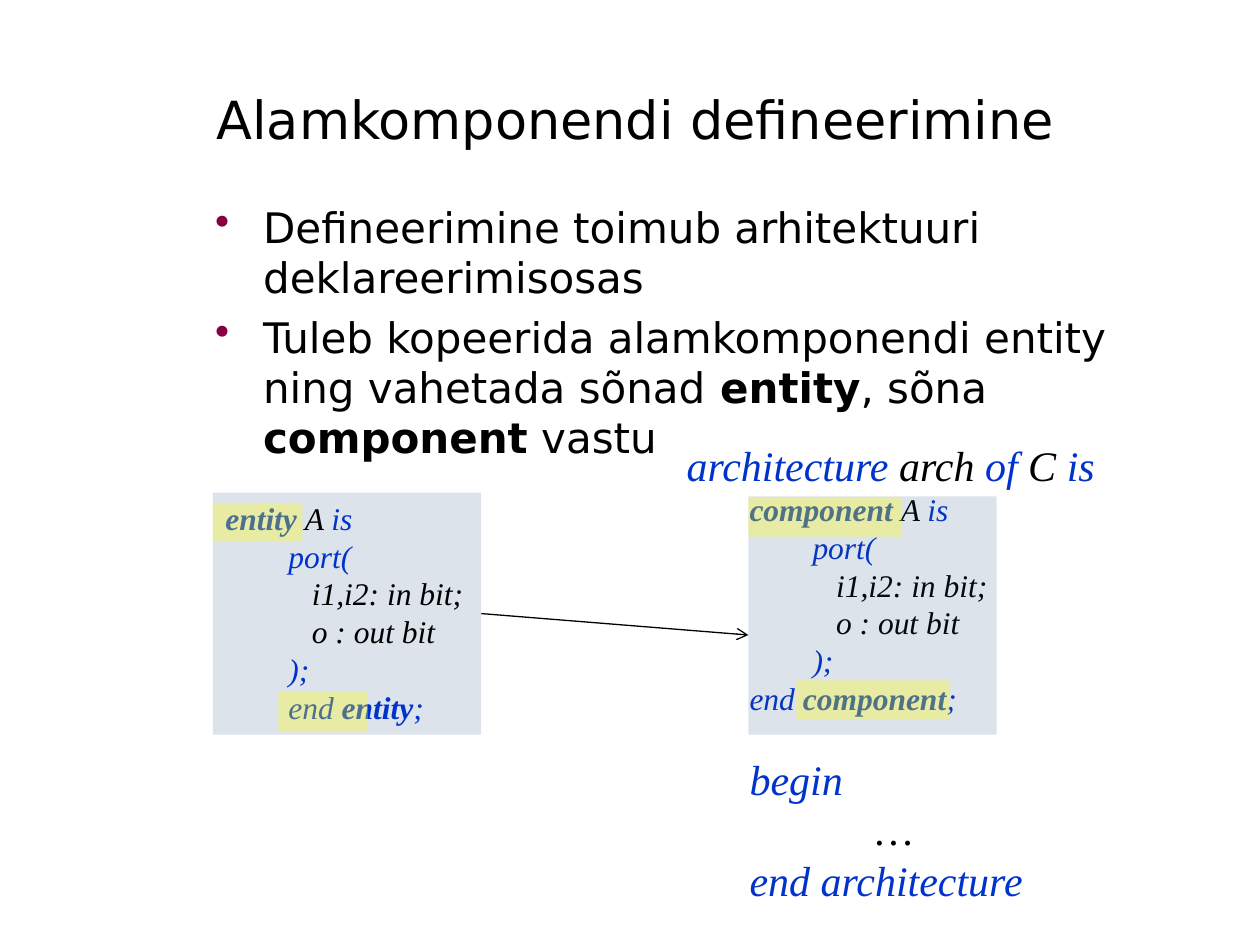
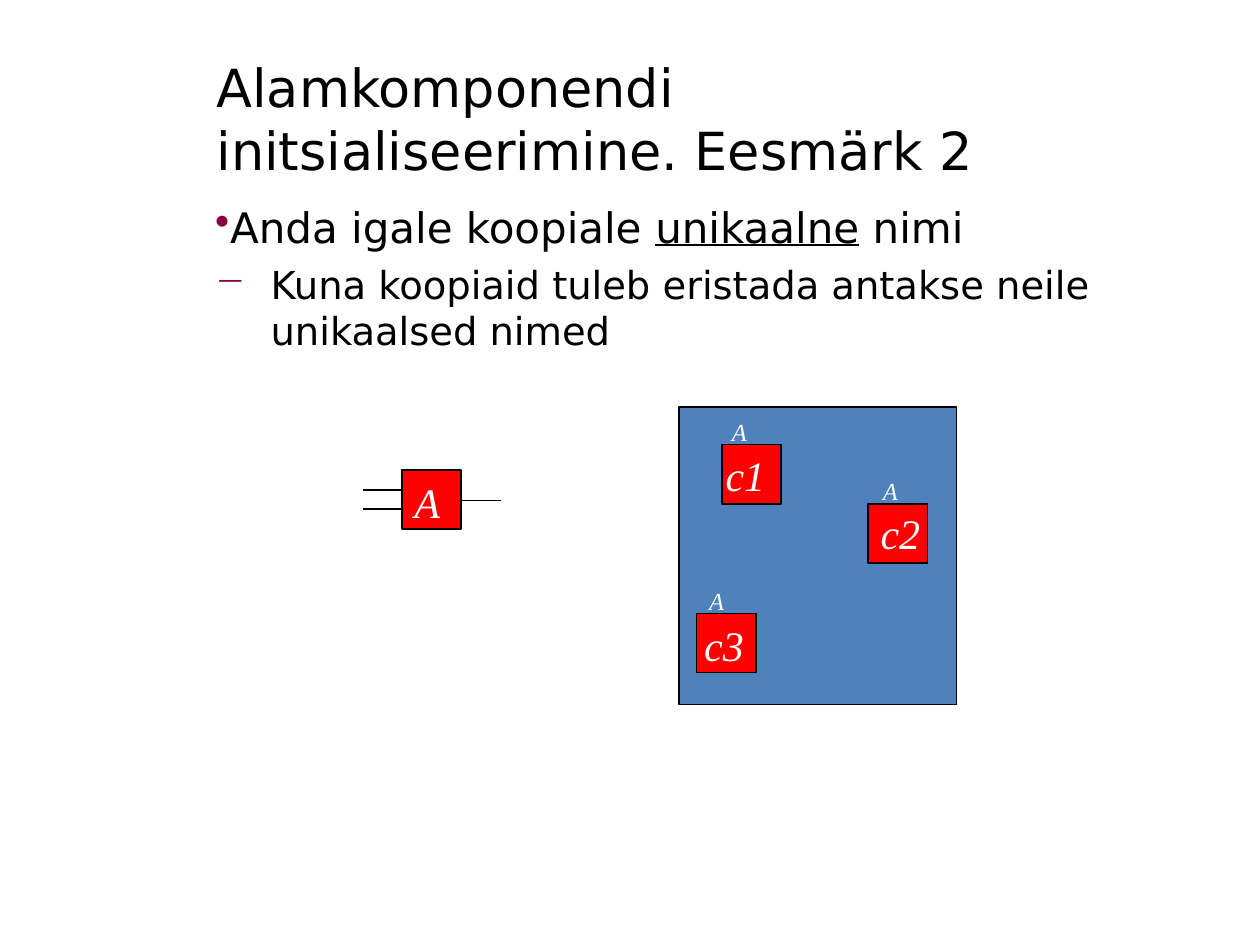
from lxml.etree import SubElement
from pptx import Presentation
from pptx.dml.color import RGBColor
from pptx.enum.shapes import MSO_CONNECTOR, MSO_SHAPE
from pptx.enum.text import MSO_ANCHOR, PP_ALIGN
from pptx.oxml.ns import qn
from pptx.util import Emu, Pt

EMU_PER_PX = 9144
COLORS = {
    "black": "000000", "white": "FFFFFF", "bullet": "870042",
    "keyword": "0033CC", "code_panel": "1F497D", "highlight": "FFFF00",
    "circuit": "4F81BD", "component": "FF0000",
}
SANS = {"name": "DejaVu Sans"}
SERIF = {"name": "Times New Roman", "italic": True}
STYLES = {
    "plain": ("black", SANS),
    "bold": ("black", {**SANS, "bold": True}),
    "underlined": ("black", {**SANS, "underline": True}),
    "keyword": ("keyword", SERIF),
    "strong": ("keyword", {**SERIF, "bold": True}),
    "code": ("black", SERIF),
    "label": ("white", SERIF),
}


def px(length):
    return Emu(length * EMU_PER_PX)


def rgb(color):
    return RGBColor.from_string(COLORS[color])


def line(size, *runs, **layout):
    """A paragraph: its point size, its (text, style) runs and its layout."""
    return {"size": size, "runs": runs, **layout}


class Deck:
    def __init__(self):
        self.presentation = Presentation()
        self.presentation.slide_width = px(1000)
        self.presentation.slide_height = px(750)
        self.slide = None

    def add_slide(self, title):
        self.slide = self.presentation.slides.add_slide(self.presentation.slide_layouts[6])
        self.text((162, 47, 744, 94), [line(30, (title, "plain"))], MSO_ANCHOR.MIDDLE)

    def text(self, box, lines, anchor=MSO_ANCHOR.TOP):
        holder = self.slide.shapes.add_textbox(*map(px, box))
        self.set_lines(holder.text_frame, lines, anchor)

    def body(self, lines):
        self.text((161, 155, 748, 529), lines)

    def set_lines(self, frame, lines, anchor=MSO_ANCHOR.TOP):
        frame.word_wrap = True
        frame.vertical_anchor = anchor
        for number, content in enumerate(lines):
            paragraph = frame.paragraphs[0] if number == 0 else frame.add_paragraph()
            self.lay_out(paragraph, **content)

    def lay_out(self, paragraph, size, runs, indent=0, hang=0, before=0, bullet=None):
        paragraph.alignment = PP_ALIGN.LEFT
        paragraph.space_before = Pt(before)
        properties = paragraph._p.get_or_add_pPr()
        properties.set("marL", str(px(indent)))
        properties.set("indent", str(px(-hang)))
        if bullet:
            tint = SubElement(properties, qn("a:buClr"))
            SubElement(tint, qn("a:srgbClr"), val=COLORS["bullet"])
            SubElement(properties, qn("a:buChar"), char=bullet)
        for words, style in runs:
            run = paragraph.add_run()
            run.text = words
            color, formats = STYLES[style]
            for attribute, value in {"size": Pt(size), **formats}.items():
                setattr(run.font, attribute, value)
            run.font.color.rgb = rgb(color)

    def rect(self, box, fill, opacity=100, outlined=False):
        shape = self.slide.shapes.add_shape(MSO_SHAPE.RECTANGLE, *map(px, box))
        shape.shadow.inherit = False
        shape.fill.solid()
        shape.fill.fore_color.rgb = rgb(fill)
        if opacity < 100:
            tint = shape._element.spPr.find(qn("a:solidFill"))[0]
            SubElement(tint, qn("a:alpha"), val=str(opacity * 1000))
        if outlined:
            shape.line.color.rgb = rgb("black")
            shape.line.width = Pt(0.75)
        else:
            shape.line.fill.background()
        return shape

    def connect(self, start, end, arrow=False):
        wire = self.slide.shapes.add_connector(MSO_CONNECTOR.STRAIGHT, *map(px, start + end))
        wire.line.color.rgb = rgb("black")
        wire.line.width = Pt(0.75)
        properties = wire._element.spPr
        if arrow:
            SubElement(properties.find(qn("a:ln")), qn("a:tailEnd"), type="arrow")
        SubElement(properties, qn("a:effectLst"))

    def component(self, left, top):
        self.rect((left, top, 47, 47), "component", outlined=True)

    def label(self, box, words, size):
        self.text(box, [line(size, (words, "label"))])


def declaration(keyword, indent, port_indent, end_indent):
    """VHDL lines that declare A, opened and closed by the keyword."""
    return [
        line(18, (keyword + " ", "strong"), ("A ", "code"), ("is", "keyword"), indent=indent),
        line(18, ("port(", "keyword"), indent=port_indent),
        line(18, ("   i1,i2: in bit;", "code"), indent=port_indent),
        line(18, ("   o : out bit", "code"), indent=port_indent),
        line(18, (");", "keyword"), indent=port_indent),
        line(18, ("end ", "keyword"), (keyword, "strong"), (";", "keyword"), indent=end_indent),
    ]


def build_definition(deck):
    deck.add_slide("Alamkomponendi defineerimine")
    bullet = {"indent": 38, "hang": 38, "bullet": "•"}
    deck.body([
        line(24, ("Defineerimine toimub arhitektuuri deklareerimisosas", "plain"), **bullet),
        line(24, ("Tuleb kopeerida alamkomponendi entity ning vahetada sõnad", "plain"),
             (" entity", "bold"), (", sõna ", "plain"), ("component", "bold"),
             (" vastu", "plain"), before=5, **bullet),
    ])
    entity = deck.rect((169, 391, 213, 192), "code_panel", 15)
    deck.set_lines(entity.text_frame, declaration("entity", 0, 50, 50))
    deck.text((535, 344, 409, 384), [
        line(24, ("architecture", "keyword"), (" arch ", "code"), ("of", "keyword"),
             (" C ", "code"), ("is", "keyword")),
        *declaration("component", 50, 100, 50),
        line(24, ("begin", "keyword"), indent=50, before=21),
        line(24, ("…", "code"), indent=150),
        line(24, ("end architecture", "keyword"), indent=50),
    ])
    deck.rect((594, 394, 197, 189), "code_panel", 15)
    deck.connect((382, 487), (594, 504), arrow=True)
    for left, top, width in ((169, 399, 71), (221, 549, 71), (594, 395, 122), (632, 540, 122)):
        deck.rect((left, top, width, 31), "highlight", 30)


def build_instances(deck):
    deck.add_slide("Alamkomponendi initsialiseerimine. Eesmärk 2")
    deck.body([
        line(24, ("Anda igale koopiale ", "plain"), ("unikaalne", "underlined"),
             (" nimi", "plain"), hang=44, bullet="•"),
        line(22, ("Kuna koopiaid tuleb eristada antakse neile unikaalsed nimed", "plain"),
             indent=44, hang=44, before=5, bullet="−"),
    ])
    deck.rect((539, 323, 220, 236), "circuit", outlined=True)
    deck.component(319, 373)
    deck.label((319, 373, 47, 50), "A", 24)
    for start, end, height in ((319, 288, 389), (319, 288, 404), (398, 367, 397)):
        deck.connect((start, height), (end, height))

    instances = (
        ("c1", (573, 353), (571, 326), (566, 352)),
        ("c2", (689, 400), (691, 373), (689, 398)),
        ("c3", (553, 487), (553, 460), (549, 487)),
    )
    for name, corner, type_corner, name_corner in instances:
        deck.component(*corner)
        deck.label((*type_corner, 47, 34), "A", 14)
        deck.label((*name_corner, 69, 50), name, 24)


def main():
    deck = Deck()
    build_definition(deck)
    build_instances(deck)
    deck.presentation.save("out.pptx")


if __name__ == "__main__":
    main()
